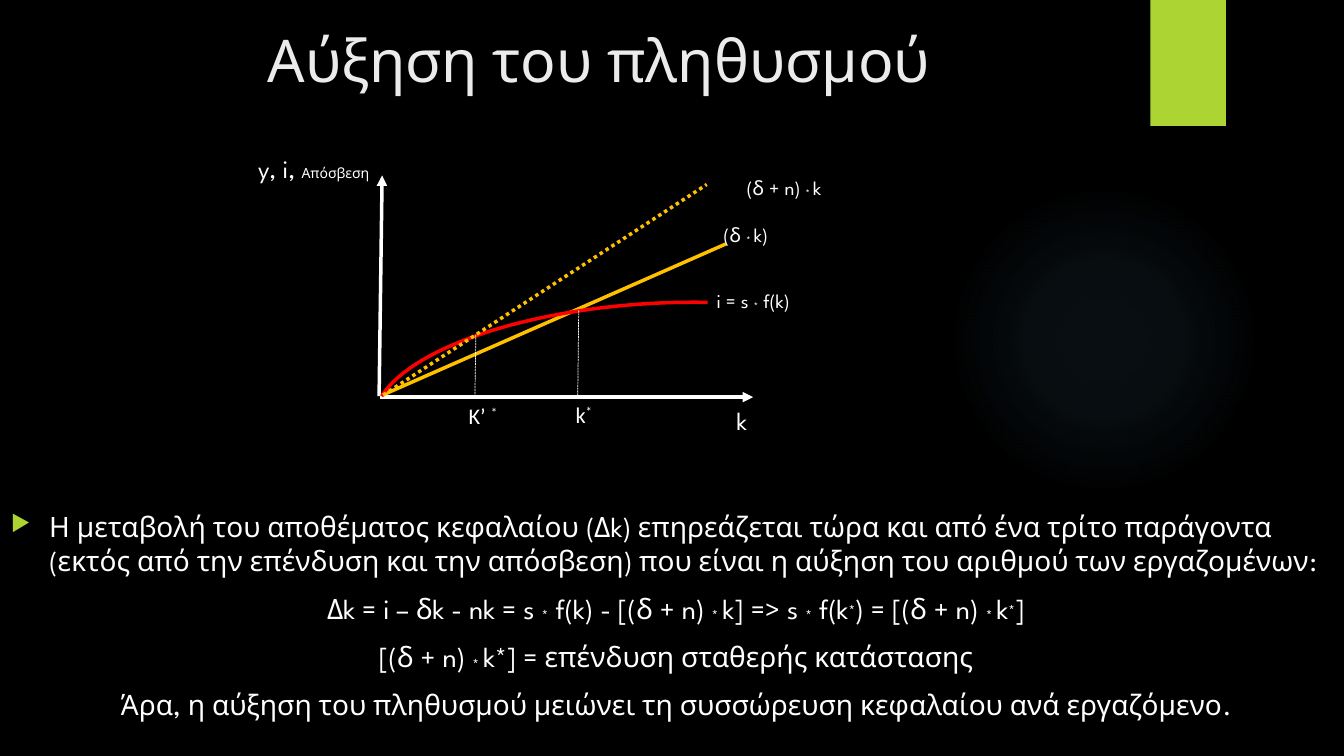
import pptx
import pptx.util
import pptx.oxml
import pptx.oxml.ns
import pptx.dml.color
import pptx.enum.dml
import pptx.enum.shapes
import pptx.enum.text
from lxml import etree

Inches = pptx.util.Inches
Pt = pptx.util.Pt
qn = pptx.oxml.ns.qn
RGB = pptx.dml.color.RGBColor.from_string
SHAPE = pptx.enum.shapes.MSO_SHAPE
ALIGN = pptx.enum.text.PP_ALIGN
FIT = pptx.enum.text.MSO_AUTO_SIZE
DASH = pptx.enum.dml.MSO_LINE

COLORS = {
    "black": "000000",
    "white": "FFFFFF",
    "title": "EBEBEB",
    "green": "ACD433",
    "amber": "FFC000",
    "red": "FF0000",
    "glow": "7AC4F0",
}
SPARTAN = "League Spartan"
LOW, HIGH, RAISED = -10, 10, 30


def add_text(place, paragraphs, size, align, font=SPARTAN, color="white", spacing=None, wrap=True, fit=FIT.SHAPE_TO_FIT_TEXT):
    box = page.shapes.add_textbox(*map(Inches, place))
    frame = box.text_frame
    frame.word_wrap = wrap
    frame.auto_size = fit
    for index, runs in enumerate(paragraphs):
        para = frame.add_paragraph() if index else frame.paragraphs[0]
        para.alignment = align
        if index:
            para.space_before = Pt(10)
        if spacing:
            para.line_spacing = spacing
        for text, base, *own_size in runs:
            span = para.add_run()
            span.text = text
            span.font.name = font
            span.font.size = Pt(own_size[0] if own_size else size)
            span.font.color.rgb = RGB(COLORS[color])
            if base:
                span.font._element.set("baseline", str(base * 1000))
    return frame


def add_line(start, end, color, width, dash=None, arrow=False):
    line = page.shapes.add_connector(
        pptx.enum.shapes.MSO_CONNECTOR.STRAIGHT, *map(Inches, start + end))
    line.line.color.rgb = RGB(COLORS[color])
    line.line.width = Pt(width)
    if dash:
        line.line.dash_style = dash
    if arrow:
        etree.SubElement(line.line._get_or_add_ln(), qn("a:tailEnd"), type="triangle")
    etree.SubElement(line._element.spPr, qn("a:effectLst"))


deck = pptx.Presentation()
deck.slide_width = Inches(13.33)
deck.slide_height = Inches(7.5)
page = deck.slides.add_slide(deck.slide_layouts[6])
page.background.fill.solid()
page.background.fill.fore_color.rgb = RGB(COLORS["black"])

glow = page.shapes.add_shape(SHAPE.OVAL, *map(Inches, (9.41, 1.83, 3.08, 3.08)))
glow.shadow.inherit = False
glow.line.fill.background()
stops = "".join(
    f'<a:gs pos="{place}000"><a:srgbClr val="{COLORS["glow"]}"><a:alpha val="{alpha}000"/></a:srgbClr></a:gs>'
    for place, alpha in ((0, 7), (36, 6), (69, 0)))
gradient = pptx.oxml.parse_xml(
    f'<a:gradFill {pptx.oxml.ns.nsdecls("a")} rotWithShape="1"><a:gsLst>{stops}</a:gsLst>'
    '<a:path path="circle"><a:fillToRect l="50000" t="50000" r="50000" b="50000"/></a:path></a:gradFill>')
glow._element.spPr.find(qn("a:prstGeom")).addnext(gradient)

tab = page.shapes.add_shape(SHAPE.RECTANGLE, *map(Inches, (11.41, 0, 0.75, 1.25)))
tab.shadow.inherit = False
tab.line.fill.background()
tab.fill.solid()
tab.fill.fore_color.rgb = RGB(COLORS["green"])

add_text((0.8, 0.19, 10.28, 1.53), [[("Αύξηση του πληθυσμού", 0)]], 42, ALIGN.CENTER,
         color="title", fit=FIT.NONE)

body = add_text((0.01, 5.01, 13.39, 2.27), [
    [("Η μεταβολή του αποθέματος κεφαλαίου (Δk) επηρεάζεται τώρα και από ένα τρίτο παράγοντα "
      "(εκτός από την επένδυση και την απόσβεση) που είναι η αύξηση του αριθμού των εργαζομένων:", 0)],
    [("Δk = i – δk - nk = s ", 0), ("*", LOW), (" f(k) - [(δ + n) ", 0), ("* ", LOW),
     ("k] => s ", 0), ("*", LOW), (" f(k", 0), ("*", HIGH), (") = [(δ + n) ", 0),
     ("* ", LOW), ("k", 0), ("*", HIGH), ("]", 0)],
    [("[(δ + n) ", 0), ("* ", LOW), ("k*] = επένδυση σταθερής κατάστασης", 0)],
    [("Άρα, η αύξηση του πληθυσμού μειώνει τη συσσώρευση κεφαλαίου ανά εργαζόμενο.", 0)],
], 20, ALIGN.CENTER, fit=FIT.NONE)
bulleted = body.paragraphs[0]
bulleted.alignment = ALIGN.LEFT
bullet = bulleted._p.get_or_add_pPr()
bullet.set("marL", str(Inches(0.38)))
bullet.set("indent", str(Inches(-0.38)))
bullet_color = etree.SubElement(bullet, qn("a:buClr"))
etree.SubElement(bullet_color, qn("a:srgbClr"), val=COLORS["green"])
etree.SubElement(bullet, qn("a:buSzPct"), val="80000")
etree.SubElement(bullet, qn("a:buChar"), char="▶")

add_line((3.77, 3.93), (7.2, 2.42), "amber", 2.5)
add_line((3.76, 3.93), (3.79, 1.74), "white", 2.5, arrow=True)
add_line((3.77, 3.94), (7.47, 3.94), "white", 2.5, arrow=True)

investment = page.shapes.add_shape(SHAPE.ARC, *map(Inches, (5.48, 1.24, 2.02, 5.56)))
investment.shadow.inherit = False
investment.rotation = 266.6
investment.adjustments[0] = 165.175
investment.adjustments[1] = 18.456
investment.fill.background()
investment.line.color.rgb = RGB(COLORS["red"])
investment.line.width = Pt(2.5)

add_line((5.74, 3.08), (5.73, 3.94), "white", 0.5, DASH.SQUARE_DOT)
add_line((3.8, 3.92), (7.01, 1.83), "amber", 2.5, DASH.ROUND_DOT)
add_line((4.72, 3.32), (4.71, 3.95), "white", 0.5, DASH.SQUARE_DOT)

add_text((6.91, 3.97, 0.6, 0.4), [[("k", 0)]], 18, ALIGN.RIGHT)
add_text((2.14, 1.47, 1.62, 0.4), [[("y, i, ", 0), ("Απόσβεση", 0, 10)]], 18, ALIGN.RIGHT)
for left, top, name in ((5.61, 3.93, "k"), (4.55, 3.94, "K’ ")):
    add_text((left, top, 0.56, 0.37), [[(name, 0), ("*", RAISED)]], 16, ALIGN.LEFT, font="Calibri")
add_text((7.01, 2.82, 1.01, 0.34), [[("i = s ", 0), ("*", LOW), (" f(k)", 0)]], 14, ALIGN.LEFT, wrap=False)
for place, start, end in (((6.88, 2.04, 1.08, 0.41), "(δ ", "k) "),
                          ((7.03, 1.58, 1.54, 0.45), "(δ + n) ", "k ")):
    add_text(place, [[(start, 0), ("* ", LOW), (end, 0)]], 14, ALIGN.CENTER, spacing=1.5)

deck.save("out.pptx")
